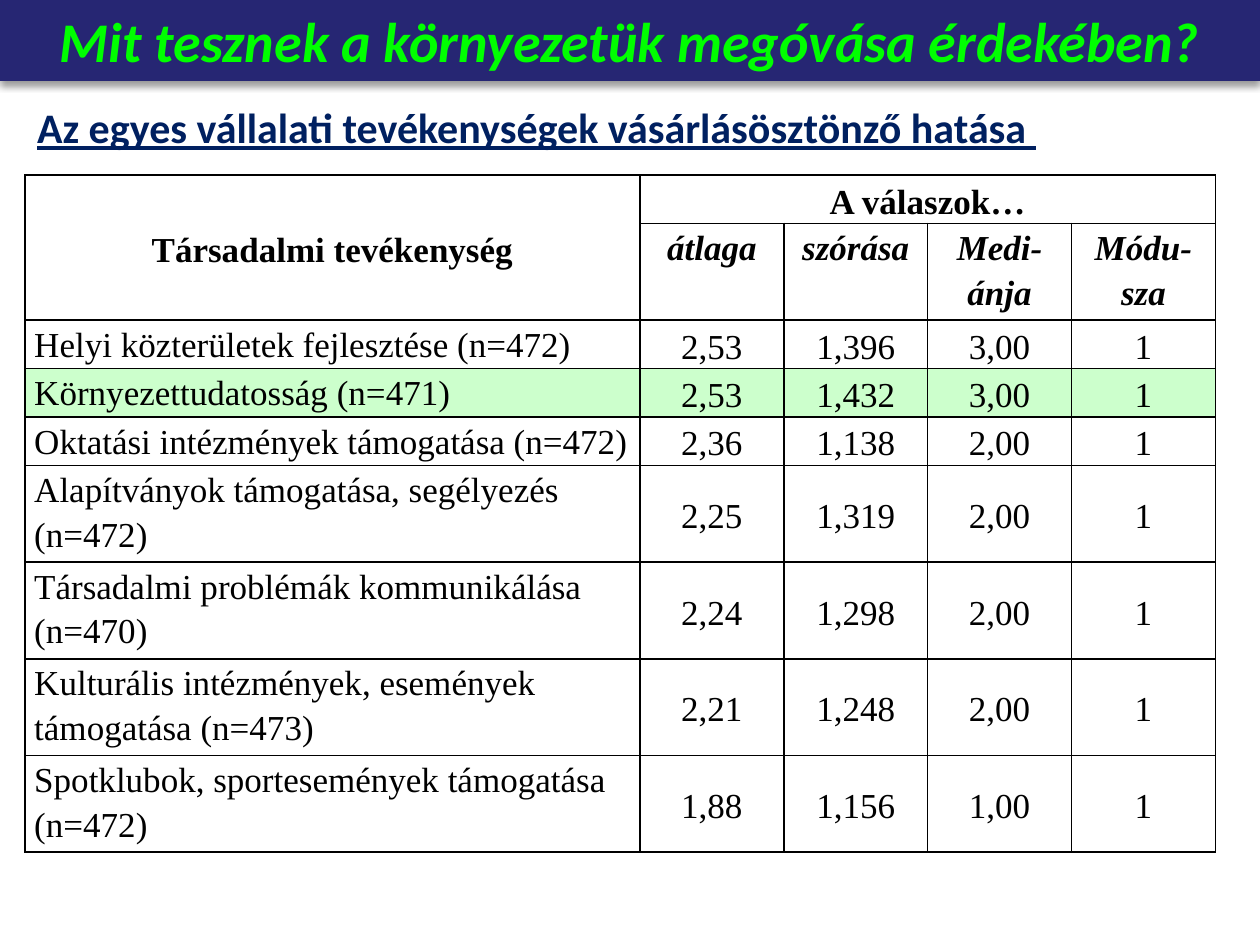
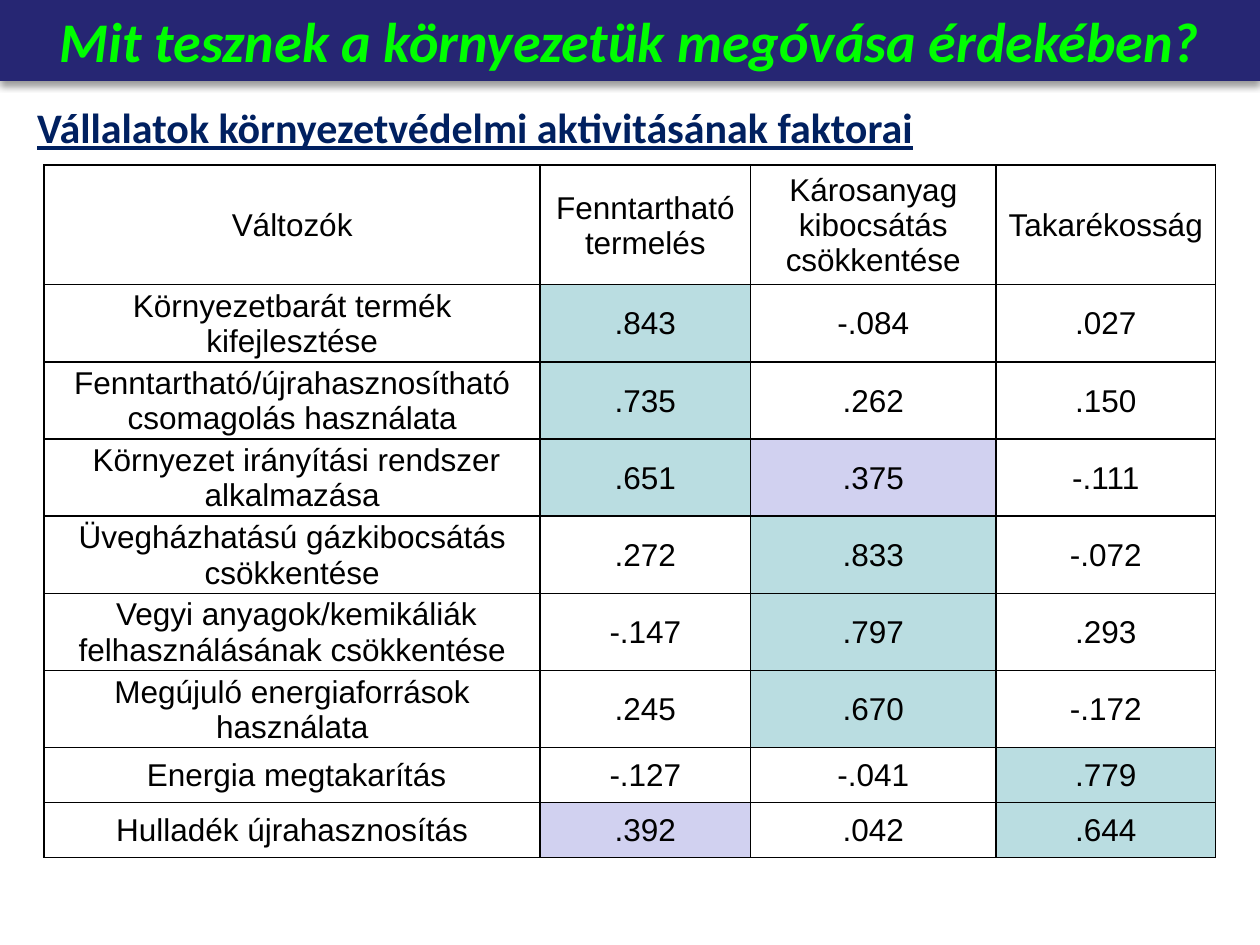
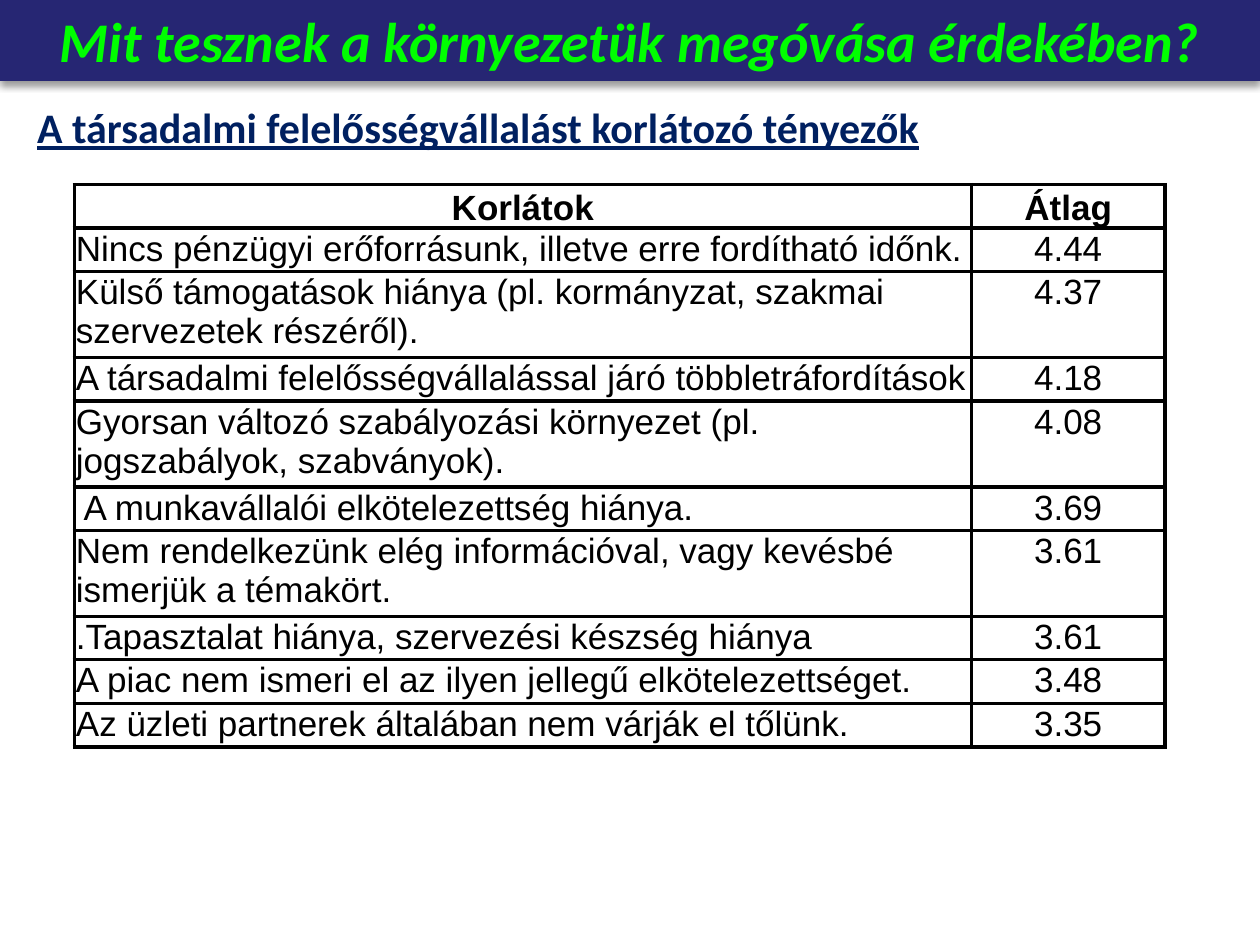
from dataclasses import dataclass

from pptx import Presentation
from pptx.dml.color import RGBColor
from pptx.enum.shapes import MSO_SHAPE as Shape
from pptx.enum.text import MSO_ANCHOR as Anchor, MSO_AUTO_SIZE as Fit, PP_ALIGN as Align
from pptx.oxml import parse_xml
from pptx.oxml.ns import nsdecls
from pptx.util import Cm, Pt

NAVY, GREEN, BLUE, BLACK = "262673", "00FF00", "002060", "000000"
MINT, TEAL, LILAC = "CCFFCC", "BADDE1", "D1D1F0"
TITLE = "Mit tesznek a környezetük megóvása érdekében?"


@dataclass
class Look:
    """Style of one table."""
    font: str
    size: int
    side: float
    top: float
    edge: float
    heads: int
    head: Anchor
    label: Anchor
    value: Anchor
    align: Align
    space: float = 1.0


EFFECT = Look("Times New Roman", 20, 0.19, 0, 1, 2, Anchor.MIDDLE, Anchor.TOP,
              Anchor.MIDDLE, Align.LEFT, 1.15)
FACTOR = Look("Arial", 18, 0.03, 0.03, 1, 0, Anchor.MIDDLE, Anchor.MIDDLE,
              Anchor.MIDDLE, Align.CENTER)
LIMIT = Look("Arial", 20, 0.03, 0.03, 2.25, 1, Anchor.BOTTOM, Anchor.TOP,
             Anchor.TOP, Align.LEFT)

EFFECTS = [
    ("Társadalmi tevékenység", "A válaszok…", "", "", ""),
    ("", "átlaga", "szórása", "Medi-ánja", "Módu-sza"),
    ("Helyi közterületek fejlesztése (n=472)", "2,53", "1,396", "3,00", "1"),
    ("Környezettudatosság (n=471)", "2,53", "1,432", "3,00", "1"),
    ("Oktatási intézmények támogatása (n=472)", "2,36", "1,138", "2,00", "1"),
    ("Alapítványok támogatása, segélyezés (n=472)", "2,25", "1,319", "2,00", "1"),
    ("Társadalmi problémák kommunikálása (n=470)", "2,24", "1,298", "2,00", "1"),
    ("Kulturális intézmények, események támogatása (n=473)", "2,21", "1,248", "2,00", "1"),
    ("Spotklubok, sportesemények támogatása (n=472)", "1,88", "1,156", "1,00", "1"),
]
FACTORS = [
    ("Változók", "Fenntartható termelés", "Károsanyag kibocsátás csökkentése", "Takarékosság"),
    ("Környezetbarát termék kifejlesztése", ".843", "-.084", ".027"),
    ("Fenntartható/újrahasznosítható csomagolás használata", ".735", ".262", ".150"),
    (" Környezet irányítási rendszer alkalmazása", ".651", ".375", "-.111"),
    ("Üvegházhatású gázkibocsátás csökkentése", ".272", ".833", "-.072"),
    (" Vegyi anyagok/kemikáliák felhasználásának csökkentése", "-.147", ".797", ".293"),
    ("Megújuló energiaforrások használata", ".245", ".670", "-.172"),
    (" Energia megtakarítás", "-.127", "-.041", ".779"),
    ("Hulladék újrahasznosítás", ".392", ".042", ".644"),
]
LIMITS = [
    ("Korlátok", "Átlag"),
    ("Nincs pénzügyi erőforrásunk, illetve erre fordítható időnk.", "4.44"),
    ("Külső támogatások hiánya (pl. kormányzat, szakmai szervezetek részéről).", "4.37"),
    ("A társadalmi felelősségvállalással járó többletráfordítások", "4.18"),
    ("Gyorsan változó szabályozási környezet (pl. jogszabályok, szabványok).", "4.08"),
    (" A munkavállalói elkötelezettség hiánya.", "3.69"),
    ("Nem rendelkezünk elég információval, vagy kevésbé ismerjük a témakört.", "3.61"),
    (".Tapasztalat hiánya, szervezési készség hiánya", "3.61"),
    ("A piac nem ismeri el az ilyen jellegű elkötelezettséget.", "3.48"),
    ("Az üzleti partnerek általában nem várják el tőlünk.", "3.35"),
]


def color(code):
    """Turn a hex string into a colour."""
    return RGBColor.from_string(code)


def write(para, text, font, size, ink, bold=False, italic=False, under=False):
    """Add one styled run to a paragraph."""
    run = para.add_run()
    run.text = text
    face = run.font
    face.name, face.size = font, Pt(size)
    face.bold, face.italic, face.underline = bold, italic, under
    face.color.rgb = color(ink)


def shade(shape):
    """Give a shape a soft shadow below it."""
    shape.shadow.inherit = False
    shape._element.spPr.remove(shape._element.spPr.find(
        "{http://schemas.openxmlformats.org/drawingml/2006/main}effectLst"))
    shape._element.spPr.append(parse_xml(
        f'<a:effectLst {nsdecls("a")}><a:outerShdw blurRad="{Pt(4)}" dist="{Pt(3)}" '
        f'dir="5400000" rotWithShape="0"><a:srgbClr val="{BLACK}"><a:alpha val="40000"/>'
        '</a:srgbClr></a:outerShdw></a:effectLst>'))


def add_band(slide):
    """Draw the title band."""
    band = slide.shapes.add_shape(Shape.RECTANGLE, 0, 0, Cm(25.4), Cm(1.63))
    band.fill.solid()
    band.fill.fore_color.rgb = color(NAVY)
    band.line.fill.background()
    shade(band)
    frame = band.text_frame
    frame.word_wrap, frame.auto_size = True, Fit.SHAPE_TO_FIT_TEXT
    frame.vertical_anchor = Anchor.TOP
    para = frame.paragraphs[0]
    para.alignment = Align.CENTER
    write(para, TITLE, "Calibri", 32, GREEN, bold=True, italic=True)


def add_topic(slide, text):
    """Write the underlined topic line."""
    box = slide.shapes.add_textbox(Cm(0.5), Cm(1.93), Cm(24.2), Cm(1.28))
    frame = box.text_frame
    frame.word_wrap, frame.auto_size = True, Fit.SHAPE_TO_FIT_TEXT
    write(frame.paragraphs[0], text, "Calibri", 24, BLUE, bold=True, under=True)


def add_edges(cell, width):
    """Line all four sides of a cell."""
    props = cell._tc.get_or_add_tcPr()
    for side in "LRTB":
        props.append(parse_xml(
            f'<a:ln{side} {nsdecls("a")} w="{Pt(width)}"><a:solidFill>'
            f'<a:srgbClr val="{BLACK}"/></a:solidFill></a:ln{side}>'))


def set_cell(cell, text, look, row, col, tint):
    """Style one table cell and write its text."""
    add_edges(cell, look.edge)
    if tint:
        cell.fill.solid()
        cell.fill.fore_color.rgb = color(tint)
    else:
        cell.fill.background()
    if cell.is_spanned:
        return
    cell.margin_left = cell.margin_right = Cm(look.side)
    cell.margin_top, cell.margin_bottom = Cm(look.top), 0
    head = row < look.heads
    sub = head and row > 0
    if sub:
        cell.vertical_anchor = Anchor.TOP
    elif head:
        cell.vertical_anchor = look.head
    else:
        cell.vertical_anchor = look.value if col else look.label
    para = cell.text_frame.paragraphs[0]
    para.alignment = Align.CENTER if head or col else look.align
    para.line_spacing = look.space
    write(para, text, look.font, look.size, BLACK, bold=head, italic=sub)


def add_grid(slide, rows, look, left, top, cols, highs, spans=(), tint=None):
    """Build a table from rows of text."""
    table = slide.shapes.add_table(len(rows), len(cols), Cm(left), Cm(top),
                                   Cm(sum(cols)), Cm(sum(highs))).table
    table.first_row = table.horz_banding = False
    for col, width in zip(table.columns, cols):
        col.width = Cm(width)
    for row, high in zip(table.rows, highs):
        row.height = Cm(high)
    for start, end in spans:
        table.cell(*start).merge(table.cell(*end))
    for r, row in enumerate(rows):
        for c, text in enumerate(row):
            set_cell(table.cell(r, c), text, look, r, c, tint and tint(row, r, c))


def mark_row(row, r, c):
    """Tint the row on environmental awareness."""
    return MINT if row[0].startswith("Környezettudatosság") else None


def mark_load(row, r, c):
    """Tint a factor loading by its strength."""
    if r == 0 or c == 0:
        return None
    load = float(row[c])
    return TEAL if load > 0.6 else LILAC if load > 0.3 else None


def add_page(deck, topic):
    """Add a slide with the shared band and a topic."""
    slide = deck.slides.add_slide(deck.slide_layouts[6])
    add_band(slide)
    add_topic(slide, topic)
    return slide


def main():
    """Build the three slides."""
    deck = Presentation()
    deck.slide_width, deck.slide_height = Cm(25.4), Cm(19.05)

    page = add_page(deck, "Az egyes vállalati tevékenységek vásárlásösztönző hatása ")
    add_grid(page, EFFECTS, EFFECT, 0.5, 3.53, [12.4] + [2.9] * 4,
             [0.97, 1.95] + [0.97] * 3 + [1.95] * 4,
             [((0, 0), (1, 0)), ((0, 1), (0, 4))], mark_row)

    page = add_page(deck, "Vállalatok környezetvédelmi aktivitásának faktorai")
    add_grid(page, FACTORS, FACTOR, 0.89, 3.33, [10, 4.24, 4.95, 4.42],
             [2.41] + [1.55] * 6 + [1.11] * 2, tint=mark_load)

    page = add_page(deck, "A társadalmi felelősségvállalást korlátozó tényezők")
    one, two = 0.87, 1.73
    add_grid(page, LIMITS, LIMIT, 1.5, 3.72, [18.08, 3.91],
             [one, one, two, one, two, one, two, one, one, one])

    deck.save("out.pptx")


if __name__ == "__main__":
    main()
